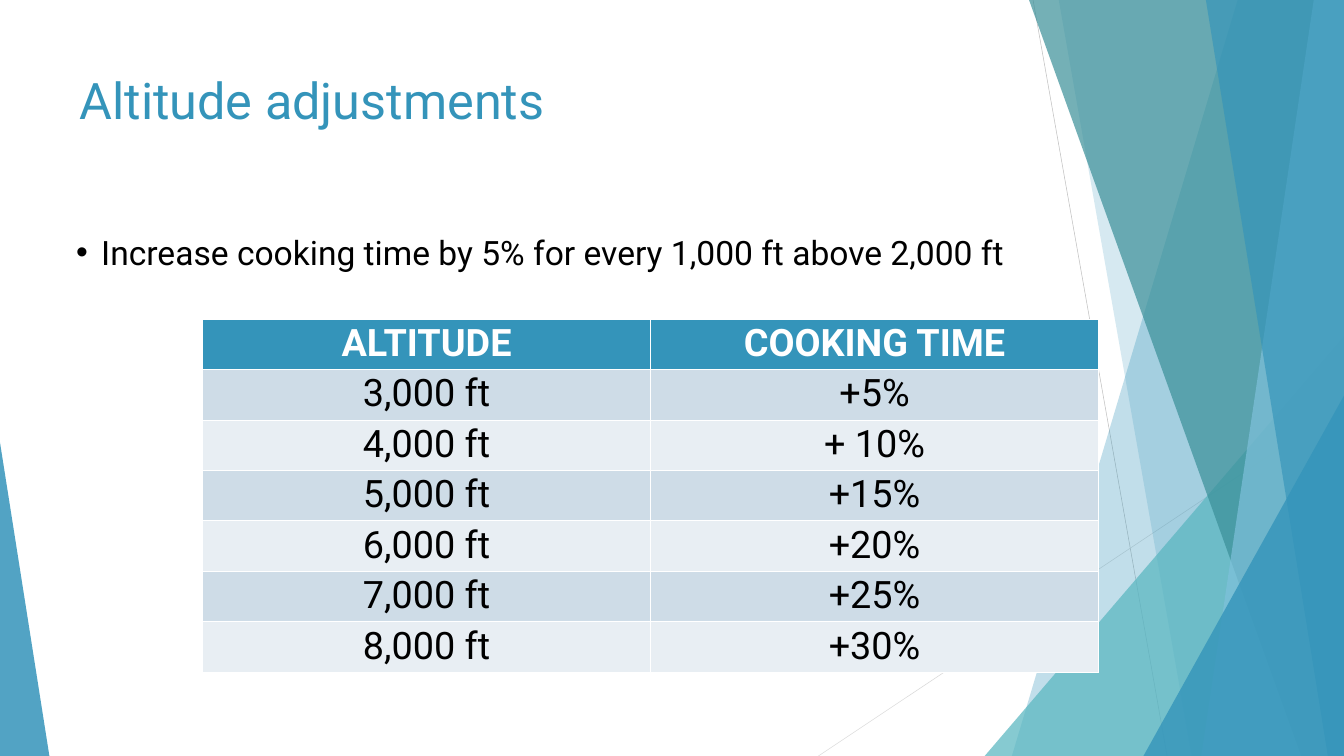
from lxml.etree import SubElement
from pptx import Presentation
from pptx.dml.color import RGBColor
from pptx.enum.shapes import MSO_CONNECTOR, MSO_SHAPE
from pptx.enum.text import MSO_ANCHOR, PP_ALIGN
from pptx.oxml.ns import qn
from pptx.util import Inches, Pt

W, H = 26.67, 15
FONT = "Roboto"
BLUE, TEAL, DEEP_TEAL, SKY = "3494BA", "58B6C0", "3A8F98", "7FC1DB"
WHITE, BLACK = "FFFFFF", "000000"
BANDS = ["CEDCE7", "E8EEF3"]

TITLE = "Altitude adjustments"
RULE = "Increase cooking time by 5% for every 1,000 ft above 2,000 ft"
ROWS = [
    ("ALTITUDE", "COOKING TIME"),
    ("3,000 ft", "+5%"),
    ("4,000 ft", "+ 10%"),
    ("5,000 ft", "+15%"),
    ("6,000 ft", "+20%"),
    ("7,000 ft", "+25%"),
    ("8,000 ft", "+30%"),
]
TABLE_LEFT, TABLE_TOP, COL_W, ROW_H = 4.02, 6.33, 8.89, 0.98

# from x, from y, to x, to y, colour
LINES = [(20.5, 0, 23.16, H, "BFBFBF"), (W, 8.05, 16.24, H, "D9D9D9")]

# Right-hand facets, back to front. A band has its left edge running from
# top x to bottom x; a triangle has a left, top, width and peak position.
FACETS = [
    ("band", (24.56, 20.08), BLUE, 30),
    ("band", (21.01, 23.65), BLUE, 20),
    ("triangle", (19.54, 6.67, 7.13, 1), TEAL, 72),
    ("band", (20.42, 25.82), DEEP_TEAL, 70),
    ("band", (26.07, 23.84), SKY, 70),
    ("band", (23.93, 26.35), BLUE, 65),
    ("triangle", (22.69, 7.85, 3.98, 1), BLUE, 80),
    ("triangle", (0, 8.78, 0.98, 0), BLUE, 85),
]


def rgb(color):
    return RGBColor.from_string(color)


def add_line(s, x1, y1, x2, y2, color):
    line = s.shapes.add_connector(MSO_CONNECTOR.STRAIGHT, *map(Inches, (x1, y1, x2, y2)))
    line.line.color.rgb = rgb(color)
    line.line.width = Pt(0.75)
    SubElement(line._element.spPr, qn("a:effectLst"))


def add_band(s, top_x, bottom_x):
    points = [(top_x, 0), (W, 0), (W, H), (bottom_x, H)]
    hundredths = [(round(x * 100), round(y * 100)) for x, y in points]
    builder = s.shapes.build_freeform(*hundredths[0], scale=Inches(0.01))
    builder.add_line_segments(hundredths[1:], close=True)
    return builder.convert_to_shape()


def add_triangle(s, left, top, width, peak):
    box = map(Inches, (left, top, width, H - top))
    sp = s.shapes.add_shape(MSO_SHAPE.ISOSCELES_TRIANGLE, *box)
    sp.adjustments[0] = peak
    return sp


def fill_translucent(sp, color, opacity):
    sp.shadow.inherit = False
    sp.line.fill.background()
    sp.fill.solid()
    sp.fill.fore_color.rgb = rgb(color)
    clr = sp._element.spPr.find(".//" + qn("a:srgbClr"))
    SubElement(clr, qn("a:alpha"), val=str(opacity * 1000))


def add_run(p, text, size, color, bold=False):
    r = p.add_run()
    r.text = text
    r.font.name, r.font.size, r.font.bold = FONT, Pt(size), bold
    r.font.color.rgb = rgb(color)


def add_text(s, box, text, size, color, wrap=True):
    tf = s.shapes.add_textbox(*map(Inches, box)).text_frame
    tf.word_wrap = wrap
    tf.vertical_anchor = MSO_ANCHOR.TOP
    p = tf.paragraphs[0]
    add_run(p, text, size, color)
    return p


def add_bullet(p, indent):
    pPr = p._p.get_or_add_pPr()
    pPr.set("marL", str(Inches(indent)))
    pPr.set("indent", str(-Inches(indent)))
    SubElement(pPr, qn("a:buFont"), typeface="Arial")
    SubElement(pPr, qn("a:buChar"), char="•")


def set_borders(cell, widths):
    """Draw white borders; they must come before the fill in the cell's XML."""
    tcPr = cell._tc.get_or_add_tcPr()
    for side, width in widths.items():
        ln = SubElement(tcPr, qn("a:ln" + side), w=str(Pt(width)))
        SubElement(SubElement(ln, qn("a:solidFill")), qn("a:srgbClr"), val=WHITE)


def add_altitude_table(s):
    n_rows, n_cols = len(ROWS), len(ROWS[0])
    box = (TABLE_LEFT, TABLE_TOP, n_cols * COL_W, n_rows * ROW_H)
    table = s.shapes.add_table(n_rows, n_cols, *map(Inches, box)).table
    for i, row in enumerate(ROWS):
        header = i == 0
        for j, text in enumerate(row):
            cell = table.cell(i, j)
            set_borders(cell, {"L": 1, "R": 1, "T": 3 if i == 1 else 1, "B": 3 if header else 1})
            cell.fill.solid()
            cell.fill.fore_color.rgb = rgb(BLUE if header else BANDS[(i - 1) % 2])
            p = cell.text_frame.paragraphs[0]
            p.alignment = PP_ALIGN.CENTER
            add_run(p, text, 54, WHITE if header else BLACK, header)


def main():
    prs = Presentation()
    prs.slide_width, prs.slide_height = Inches(W), Inches(H)
    s = prs.slides.add_slide(prs.slide_layouts[6])

    for line in LINES:
        add_line(s, *line)
    draw = {"band": add_band, "triangle": add_triangle}
    for kind, geometry, color, opacity in FACETS:
        fill_translucent(draw[kind](s, *geometry), color, opacity)

    add_text(s, (1.48, 1.33, 18.8, 2.89), TITLE, 72, BLUE)
    add_altitude_table(s)
    p = add_text(s, (1.41, 4.55, 19.25, 0.91), RULE, 48, BLACK, wrap=False)
    add_bullet(p, 0.5)
    prs.save("out.pptx")


if __name__ == "__main__":
    main()
